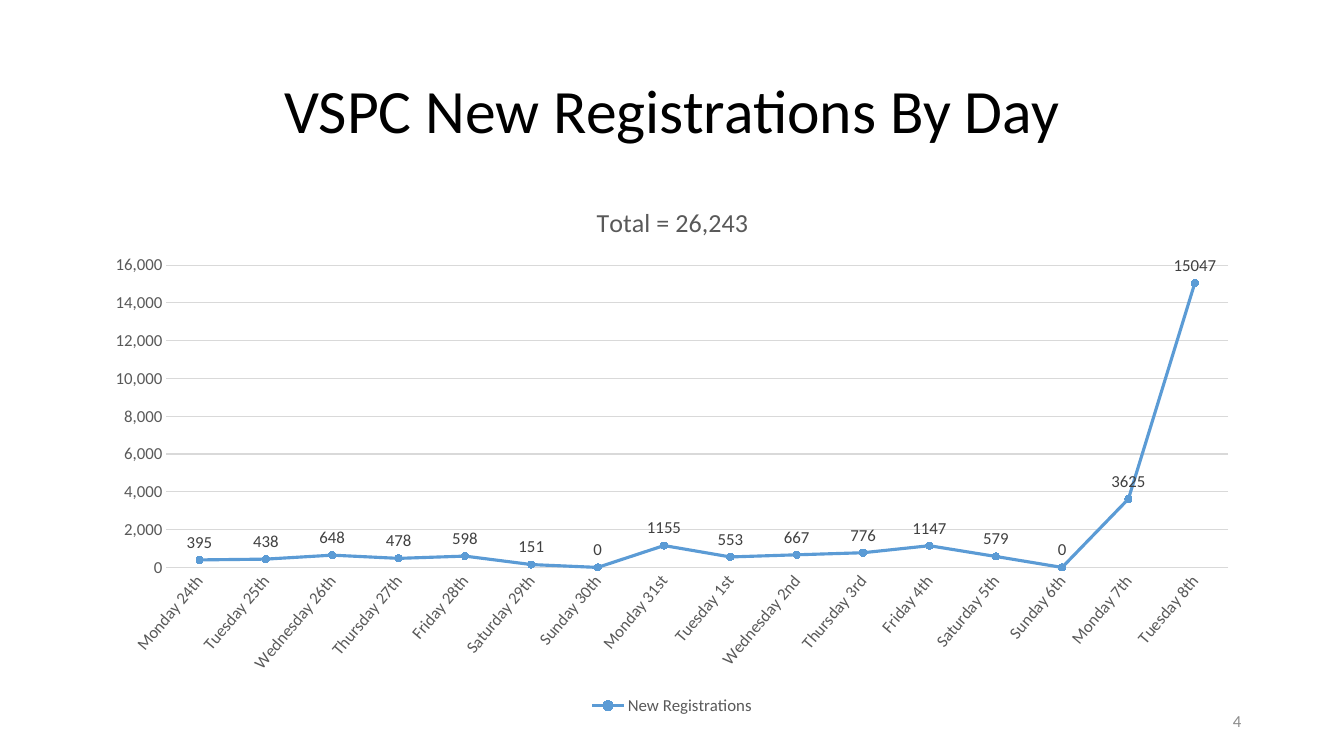
from lxml.etree import SubElement
from pptx import Presentation
from pptx.chart.data import CategoryChartData
from pptx.dml.color import RGBColor
from pptx.enum.chart import (XL_CHART_TYPE, XL_LABEL_POSITION, XL_LEGEND_POSITION,
                             XL_MARKER_STYLE, XL_TICK_MARK)
from pptx.enum.text import MSO_ANCHOR, PP_ALIGN
from pptx.oxml import parse_xml
from pptx.oxml.ns import nsdecls, qn
from pptx.util import Inches, Pt

WIDTH, HEIGHT = Inches(13.33), Inches(7.5)
MARGIN = Inches(0.92)
CONTENT_WIDTH = WIDTH - 2 * MARGIN
CHART_HEIGHT = Inches(5.29)
DAY_LABEL_ANGLE = -50
FONT = "Calibri"
COLORS = {
    "title": "000000",
    "axis": "595959",
    "label": "404040",
    "grid": "D9D9D9",
    "series": "5B9BD5",
    "number": "8C8C8C",
}
REGISTRATIONS = {
    "Monday 24th": 395,
    "Tuesday 25th": 438,
    "Wednesday 26th": 648,
    "Thursday 27th": 478,
    "Friday 28th": 598,
    "Saturday 29th": 151,
    "Sunday 30th": 0,
    "Monday 31st": 1155,
    "Tuesday 1st": 553,
    "Wednesday 2nd": 667,
    "Thursday 3rd": 776,
    "Friday 4th": 1147,
    "Saturday 5th": 579,
    "Sunday 6th": 0,
    "Monday 7th": 3625,
    "Tuesday 8th": 15047,
}


def color(role):
    return RGBColor.from_string(COLORS[role])


def style_font(font, size, role):
    font.name = FONT
    font.size = Pt(size)
    font.bold = False
    font.color.rgb = color(role)


def style_line(line, width, role):
    line.color.rgb = color(role)
    line.width = Pt(width)


def write(frame, text, size, role, align):
    frame.word_wrap = True
    frame.vertical_anchor = MSO_ANCHOR.MIDDLE
    frame.text = text
    paragraph = frame.paragraphs[0]
    paragraph.alignment = align
    style_font(paragraph.font, size, role)
    return paragraph


def set_title(slide, text):
    title = slide.shapes.title
    title.left, title.top = MARGIN, Inches(0.4)
    title.width, title.height = CONTENT_WIDTH, Inches(1.45)
    write(title.text_frame, text, 44, "title", PP_ALIGN.CENTER).line_spacing = 0.9


def place_in_chart(part, position, left, top, width=None, height=None):
    for old_layout in part.findall(qn("c:layout")):
        part.remove(old_layout)
    layout = parse_xml(f"<c:layout {nsdecls('c')}><c:manualLayout/></c:layout>")
    settings = [("xMode", "edge"), ("yMode", "edge"),
                ("x", Inches(left) / CONTENT_WIDTH), ("y", Inches(top) / CHART_HEIGHT)]
    if width:
        settings.insert(0, ("layoutTarget", "inner"))
        settings += [("w", Inches(width) / CONTENT_WIDTH),
                     ("h", Inches(height) / CHART_HEIGHT)]
    for setting, value in settings:
        SubElement(layout[0], qn(f"c:{setting}")).set("val", str(value))
    part.insert(position, layout)


def style_axes(chart):
    days, counts = chart.category_axis, chart.value_axis
    for axis in (days, counts):
        axis.major_tick_mark = axis.minor_tick_mark = XL_TICK_MARK.NONE
        style_font(axis.tick_labels.font, 12, "axis")
    style_line(days.format.line, 0.75, "grid")
    days._element.txPr.bodyPr.set("rot", str(DAY_LABEL_ANGLE * 60000))
    counts.format.line.fill.background()
    counts.has_major_gridlines = True
    style_line(counts.major_gridlines.format.line, 0.75, "grid")
    counts.tick_labels.number_format = "#,##0"
    counts.tick_labels.number_format_is_linked = False


def style_series(series):
    series.smooth = False
    style_line(series.format.line, 2.25, "series")
    series.marker.style = XL_MARKER_STYLE.CIRCLE
    series.marker.size = 5
    series.marker.format.fill.solid()
    series.marker.format.fill.fore_color.rgb = color("series")
    style_line(series.marker.format.line, 0.75, "series")
    labels = series.data_labels
    labels.show_value = True
    labels.position = XL_LABEL_POSITION.ABOVE
    style_font(labels.font, 12, "label")


def set_chart_title(chart, text):
    chart.has_title = True
    heading = chart.chart_title
    heading.text_frame.text = text
    style_font(heading.text_frame.paragraphs[0].font, 18.6, "axis")
    heading.include_in_layout = False
    place_in_chart(heading._element, 1, 4.95, 0.13)


def add_daily_chart(slide, heading, registrations):
    data = CategoryChartData()
    data.categories = list(registrations)
    data.add_series("New Registrations", list(registrations.values()))
    chart = slide.shapes.add_chart(XL_CHART_TYPE.LINE_MARKERS, MARGIN, Inches(1.85),
                                   CONTENT_WIDTH, CHART_HEIGHT, data).chart
    chart.font.name = FONT
    chart.font.size = Pt(10)
    set_chart_title(chart, heading)
    chart.has_legend = True
    chart.legend.position = XL_LEGEND_POSITION.BOTTOM
    chart.legend.include_in_layout = False
    style_font(chart.legend.font, 12, "axis")
    plot = chart.plots[0]
    plot.vary_by_categories = False
    style_axes(chart)
    style_series(plot.series[0])
    place_in_chart(chart._chartSpace.chart.plotArea, 0, 0.73, 0.78, 10.53, 3)


def add_slide_number(slide, number):
    width = Inches(3)
    box = slide.shapes.add_textbox(WIDTH - MARGIN - width, Inches(6.95), width, Inches(0.4))
    write(box.text_frame, number, 12, "number", PP_ALIGN.RIGHT)


def main():
    deck = Presentation()
    deck.slide_width, deck.slide_height = WIDTH, HEIGHT
    slide = deck.slides.add_slide(deck.slide_layouts.get_by_name("Title Only"))
    set_title(slide, "VSPC New Registrations By Day")
    add_daily_chart(slide, "Total = 26,243", REGISTRATIONS)
    add_slide_number(slide, "4")
    deck.save("out.pptx")


if __name__ == "__main__":
    main()
